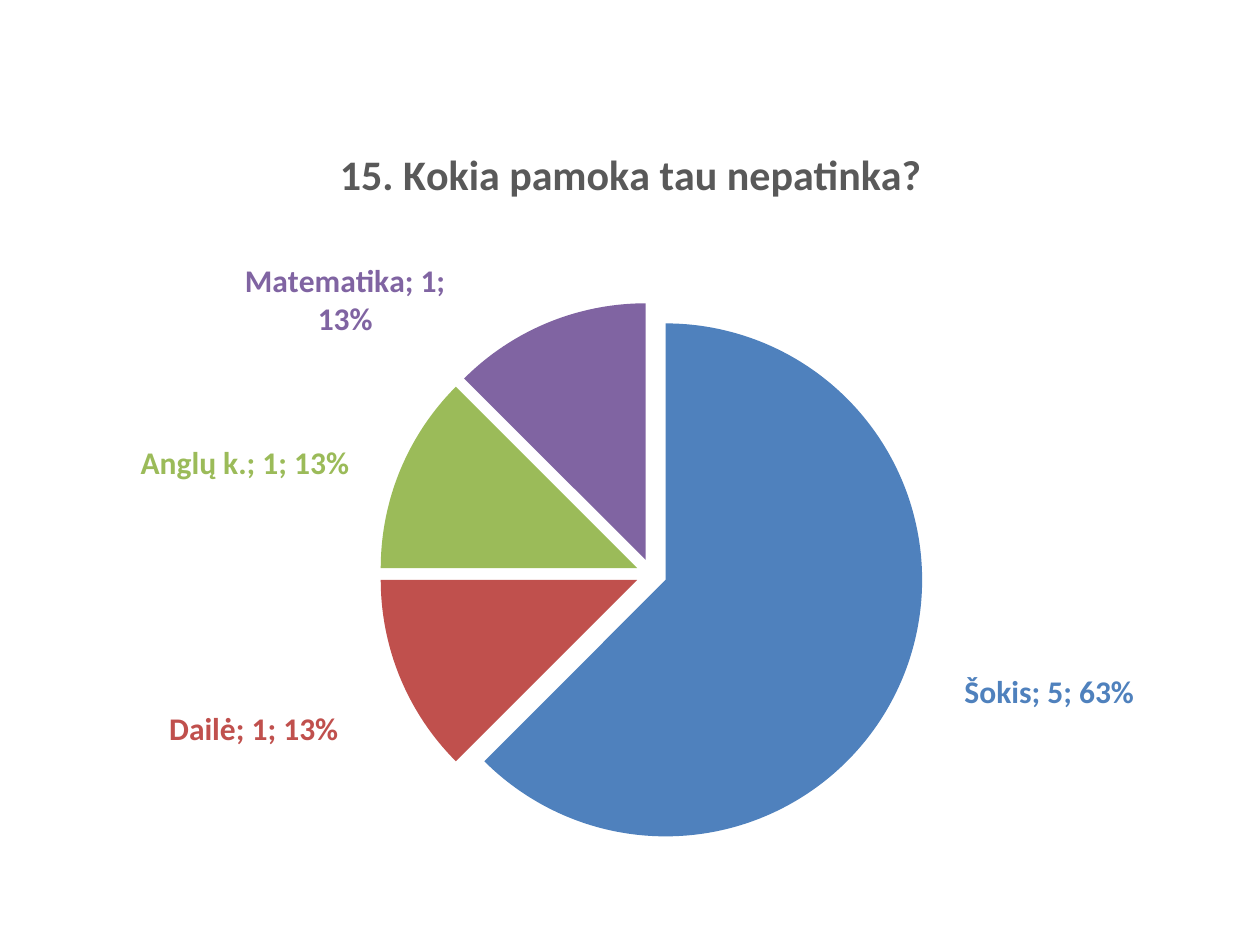
"""Builds a slide with an exploded pie chart of the least liked lessons."""
from lxml import etree
from pptx import Presentation
from pptx.chart.data import CategoryChartData
from pptx.dml.color import RGBColor
from pptx.enum.chart import XL_CHART_TYPE, XL_LABEL_POSITION
from pptx.oxml.ns import qn
from pptx.util import Pt

PIE = XL_CHART_TYPE.PIE
OUTSIDE_END = XL_LABEL_POSITION.OUTSIDE_END
PX = 914400 / 126
FONT = "Calibri"
TITLE = "15. Kokia pamoka tau nepatinka?"
COLORS = {
    "title": "595959",
    "Šokis": "4F81BD",
    "Dailė": "C0504D",
    "Anglų k.": "9BBB59",
    "Matematika": "8064A2",
}
LESSONS = [
    ("Šokis", 5, (0.05, -0.01)),
    ("Dailė", 1, (-0.05, 0.04)),
    ("Anglų k.", 1, (-0.04, 0.02)),
    ("Matematika", 1, (-0.09, 0.03)),
]


def set_layout(parent, index, **values):
    for old in parent.findall(qn("c:layout")):
        parent.remove(old)
    layout = etree.Element(qn("c:layout"))
    manual = etree.SubElement(layout, qn("c:manualLayout"))
    for tag, value in values.items():
        etree.SubElement(manual, qn(f"c:{tag}")).set("val", str(value))
    parent.insert(index, layout)


def style_font(font, size, color):
    font.name = FONT
    font.size = Pt(size)
    font.bold = True
    font.color.rgb = RGBColor.from_string(COLORS[color])


prs = Presentation()
prs.slide_width, prs.slide_height = int(1260 * PX), int(945 * PX)
s = prs.slides.add_slide(prs.slide_layouts[6])

data = CategoryChartData()
data.categories = [name for name, value, offset in LESSONS]
data.add_series(TITLE, [value for name, value, offset in LESSONS])
box = [int(n * PX) for n in (79, 116, 1101, 745)]
chart = s.shapes.add_chart(PIE, *box, data).chart
chart.has_legend = False
chart.font.name = FONT
chart.font.size = Pt(10)

chart.has_title = True
p = chart.chart_title.text_frame.paragraphs[0]
r = p.add_run()
r.text = TITLE
style_font(r.font, 24, "title")
title = chart._chartSpace.find(f".//{qn('c:title')}")
set_layout(title, 1, xMode="edge", yMode="edge", x=0.23, y=0.03)
plot_area = chart._chartSpace.find(f".//{qn('c:plotArea')}")
set_layout(plot_area, 0, layoutTarget="inner", xMode="edge", yMode="edge",
           x=0.27, y=0.25, w=0.5, h=0.73)

series = chart.plots[0].series[0]
explosion = etree.Element(qn("c:explosion"))
explosion.set("val", "6")
series._element.find(qn("c:tx")).addnext(explosion)

labels = series.data_labels
labels.show_value = labels.show_percentage = labels.show_category_name = True
labels.position = OUTSIDE_END
style_font(labels.font, 18, "Šokis")
for leader in labels._element.findall(qn("c:showLeaderLines")):
    leader.set("val", "0")

for i, (name, value, offset) in enumerate(LESSONS):
    point = series.points[i]
    point.format.fill.solid()
    point.format.fill.fore_color.rgb = RGBColor.from_string(COLORS[name])
    style_font(point.data_label.font, 18, name)
    point.data_label.position = OUTSIDE_END

for label, (name, value, (dx, dy)) in zip(labels._element.findall(qn("c:dLbl")), LESSONS):
    set_layout(label, 1, x=dx, y=dy)
    for tag in ("showVal", "showCatName", "showPercent"):
        label.find(qn(f"c:{tag}")).set("val", "1")
    separator = etree.Element(qn("c:separator"))
    separator.text = "; "
    label.find(qn("c:showBubbleSize")).addnext(separator)

prs.save("out.pptx")
